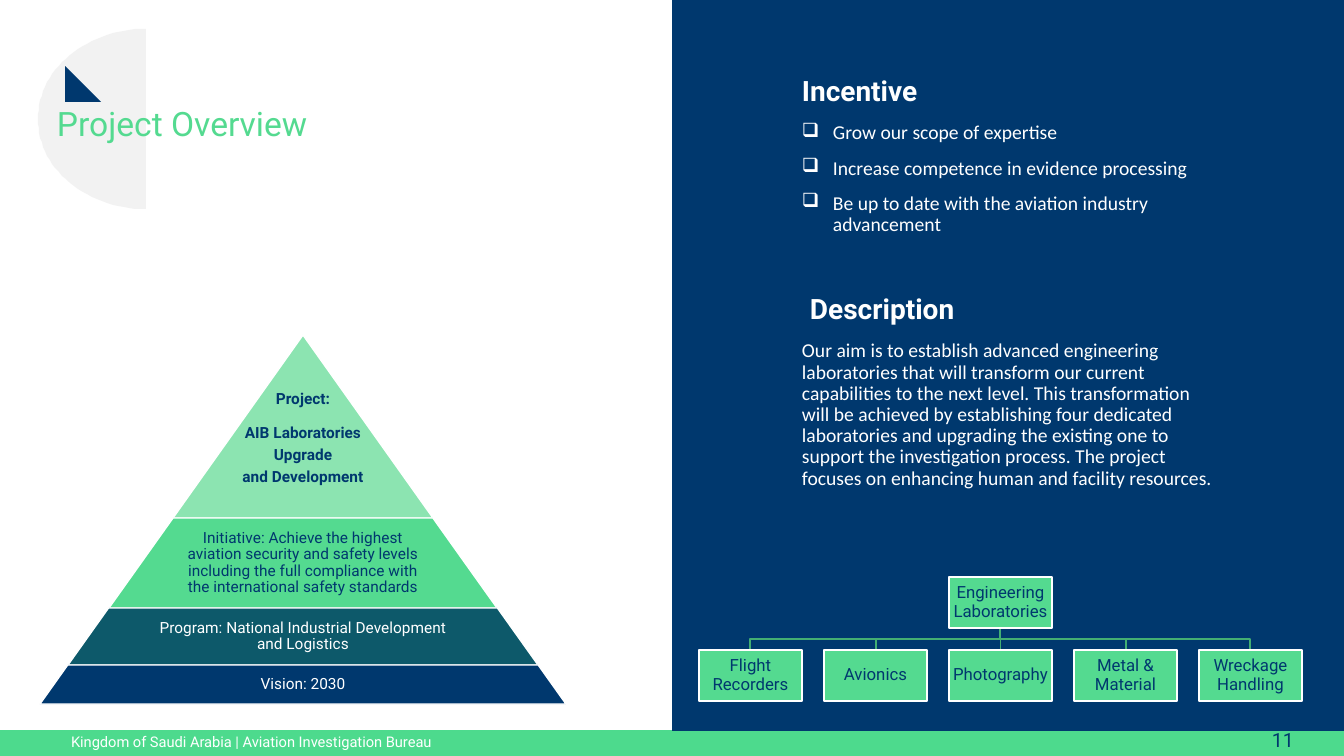
import math
from dataclasses import dataclass

from lxml import etree
from pptx import Presentation
from pptx.dml.color import RGBColor
from pptx.enum import shapes, text
from pptx.oxml.ns import qn
from pptx.util import Pt

PX = 9071  # EMU in one px; the page is 1344 by 756 px


@dataclass(frozen=True)
class Theme:
    navy: str = "00386E"
    teal: str = "0D596A"
    green: str = "54DA90"
    pale_green: str = "8CE4B1"
    footer_green: str = "4DDA8D"
    line_green: str = "43AF73"
    grey: str = "F2F2F2"
    white: str = "FFFFFF"
    display: str = "Roboto"
    reading: str = "Calibri"
    title: int = 24
    heading: int = 20
    body: int = 14
    chart: int = 12
    pyramid: int = 11
    footer: float = 10.5


theme = Theme()
LEFT, CENTER, RIGHT = text.PP_ALIGN.LEFT, text.PP_ALIGN.CENTER, text.PP_ALIGN.RIGHT
TOP, MIDDLE = text.MSO_ANCHOR.TOP, text.MSO_ANCHOR.MIDDLE


def paint(shape, fill=None, line=None):
    shape.shadow.inherit = False
    if fill:
        shape.fill.solid()
        shape.fill.fore_color.rgb = RGBColor.from_string(fill)
    else:
        shape.fill.background()
    if line:
        shape.line.color.rgb = RGBColor.from_string(line)
        shape.line.width = Pt(1)
    else:
        shape.line.fill.background()


def write(box, lines, size, color, font=theme.display, bold=False, align=LEFT,
          anchor=TOP, margins=(10, 5, 10, 5), before=0, after=0):
    frame = box.text_frame
    frame.word_wrap = True
    frame.auto_size = text.MSO_AUTO_SIZE.NONE
    frame.vertical_anchor = anchor
    frame.margin_left, frame.margin_top, frame.margin_right, frame.margin_bottom = (
        margin * PX for margin in margins)
    for number, line in enumerate(lines):
        para = frame.add_paragraph() if number else frame.paragraphs[0]
        para.alignment = align
        para.line_spacing = 0.9
        para.space_before, para.space_after = Pt(before if number else 0), Pt(after)
        span = para.add_run()
        span.text = line
        span.font.name, span.font.size, span.font.bold = font, Pt(size), bold
        span.font.color.rgb = RGBColor.from_string(color)
    return frame


deck = Presentation()
deck.slide_width, deck.slide_height = 1344 * PX, 756 * PX
page = deck.slides.add_slide(deck.slide_layouts[5])
parts = page.shapes

# Footer band, page number and right panel
band = parts.add_shape(shapes.MSO_SHAPE.RECTANGLE, 0, 730 * PX, 1344 * PX, 26 * PX)
paint(band, theme.footer_green)
write(band, ["Kingdom of Saudi Arabia | Aviation Investigation Bureau"],
      theme.footer, theme.white, anchor=MIDDLE, margins=(71, 0, 10, 0))
page_number = parts.add_textbox(1254 * PX, 726 * PX, 50 * PX, 34 * PX)
write(page_number, ["11"], theme.body, theme.navy, align=RIGHT)
panel = parts.add_shape(shapes.MSO_SHAPE.RECTANGLE, 672 * PX, 0, 672 * PX, 731 * PX)
paint(panel, theme.navy)

# Half ellipse and corner triangle
arc = [(146 - 108 * math.sin(math.pi * step / 60), 119 - 90 * math.cos(math.pi * step / 60))
       for step in range(61)]
outline = parts.build_freeform(*arc[0], scale=PX)
outline.add_line_segments(arc[1:], close=True)
paint(outline.convert_to_shape(), theme.grey)
corner = parts.add_shape(shapes.MSO_SHAPE.RIGHT_TRIANGLE, 65 * PX, 66 * PX, 36 * PX, 36 * PX)
paint(corner, theme.navy)

# Title, moved in front of the decoration
title = parts.title
title.left, title.top, title.width, title.height = 47 * PX, 102 * PX, 438 * PX, 63 * PX
write(title, ["Project Overview"], theme.title, theme.green)
corner.element.addnext(title.element)

# Incentive and description
for heading, top, indent in [("Incentive", 72, 10), ("Description", 290, 18)]:
    box = parts.add_textbox(792 * PX, top * PX, 438 * PX, 37 * PX)
    write(box, [heading], theme.heading, theme.white, bold=True, margins=(indent, 5, 10, 5))

incentives = parts.add_textbox(792 * PX, 118 * PX, 438 * PX, 142 * PX)
frame = write(incentives, [
    "Grow our scope of expertise",
    "Increase competence in evidence processing",
    "Be up to date with the aviation industry advancement",
], theme.body, theme.white, theme.reading, before=10)
for para in frame.paragraphs:
    properties = para._p.get_or_add_pPr()
    properties.set("marL", str(31 * PX))
    properties.set("indent", str(-31 * PX))
    etree.SubElement(properties, qn("a:buChar")).set("char", "❑")

description = parts.add_textbox(792 * PX, 336 * PX, 438 * PX, 190 * PX)
write(description, [
    "Our aim is to establish advanced engineering laboratories that will transform our "
    "current capabilities to the next level. This transformation will be achieved by "
    "establishing four dedicated laboratories and upgrading the existing one to support "
    "the investigation process. The project focuses on enhancing human and facility "
    "resources."], theme.body, theme.white, theme.reading)

# Pyramid: every level widens by the same slope from the apex
APEX_X, APEX_Y, SLOPE = 303, 335, 0.712
levels = [
    (518, theme.pale_green, theme.navy,
     ["Project:", "AIB Laboratories", "Upgrade", "and Development"]),
    (608, theme.green, theme.navy,
     ["Initiative: Achieve the highest aviation security and safety levels including "
      "the full compliance with the international safety standards"]),
    (665, theme.teal, theme.white,
     ["Program: National Industrial Development and Logistics"]),
    (704, theme.navy, theme.white, ["Vision: 2030"]),
]
top = APEX_Y
for bottom, fill, color, lines in levels:
    half, height = round(SLOPE * (bottom - APEX_Y)), bottom - top
    level = parts.add_shape(shapes.MSO_SHAPE.TRAPEZOID, (APEX_X - half) * PX, top * PX,
                            2 * half * PX, height * PX)
    level.adjustments[0] = SLOPE
    paint(level, fill, theme.white)
    is_peak = top == APEX_Y
    reach = half if is_peak else round(half * 0.65)
    label = parts.add_textbox((APEX_X - reach) * PX, top * PX, 2 * reach * PX, height * PX)
    frame = write(label, lines, theme.pyramid, color, bold=is_peak, align=CENTER,
                  anchor=TOP if is_peak else MIDDLE,
                  margins=(2, 56 if is_peak else 2, 2, 2), after=4 if is_peak else 0)
    if is_peak:
        frame.paragraphs[0].space_after = Pt(12.5)
    top = bottom

# Organisation chart
BOX_W, BOX_H, STEP = 103, 51, 125
FIRST_X, BOSS_Y, TEAM_Y = 699, 577, 650
boss_x = FIRST_X + 2 * STEP
stem_x, stem_y = boss_x + BOX_W / 2, BOSS_Y + BOX_H
bus_y = (stem_y + TEAM_Y) / 2
teams = ["Flight Recorders", "Avionics", "Photography", "Metal & Material", "Wreckage Handling"]
for column in (0, 1, 3, 4):
    team_x = FIRST_X + column * STEP + BOX_W / 2
    branch = parts.build_freeform(stem_x, stem_y, scale=PX)
    branch.add_line_segments([(stem_x, bus_y), (team_x, bus_y), (team_x, TEAM_Y)], close=False)
    paint(branch.convert_to_shape(), line=theme.line_green)
stem = parts.add_connector(shapes.MSO_CONNECTOR.STRAIGHT, round(stem_x * PX), stem_y * PX,
                           round(stem_x * PX), TEAM_Y * PX)
stem.line.color.rgb = RGBColor.from_string(theme.line_green)
stem.line.width = Pt(1)
etree.SubElement(stem._element.spPr, qn("a:effectLst"))

units = [("Engineering Laboratories", boss_x, BOSS_Y)]
units += [(team, FIRST_X + column * STEP, TEAM_Y) for column, team in enumerate(teams)]
for name, left, top in units:
    unit = parts.add_shape(shapes.MSO_SHAPE.RECTANGLE, left * PX, top * PX, BOX_W * PX, BOX_H * PX)
    paint(unit, theme.green, theme.white)
    write(unit, [name], theme.chart, theme.navy, align=CENTER, anchor=MIDDLE, margins=(1, 1, 1, 1))
    if name == "Engineering Laboratories":
        stem.begin_connect(unit, 2)
    elif name == "Photography":
        stem.end_connect(unit, 0)

deck.save("out.pptx")
